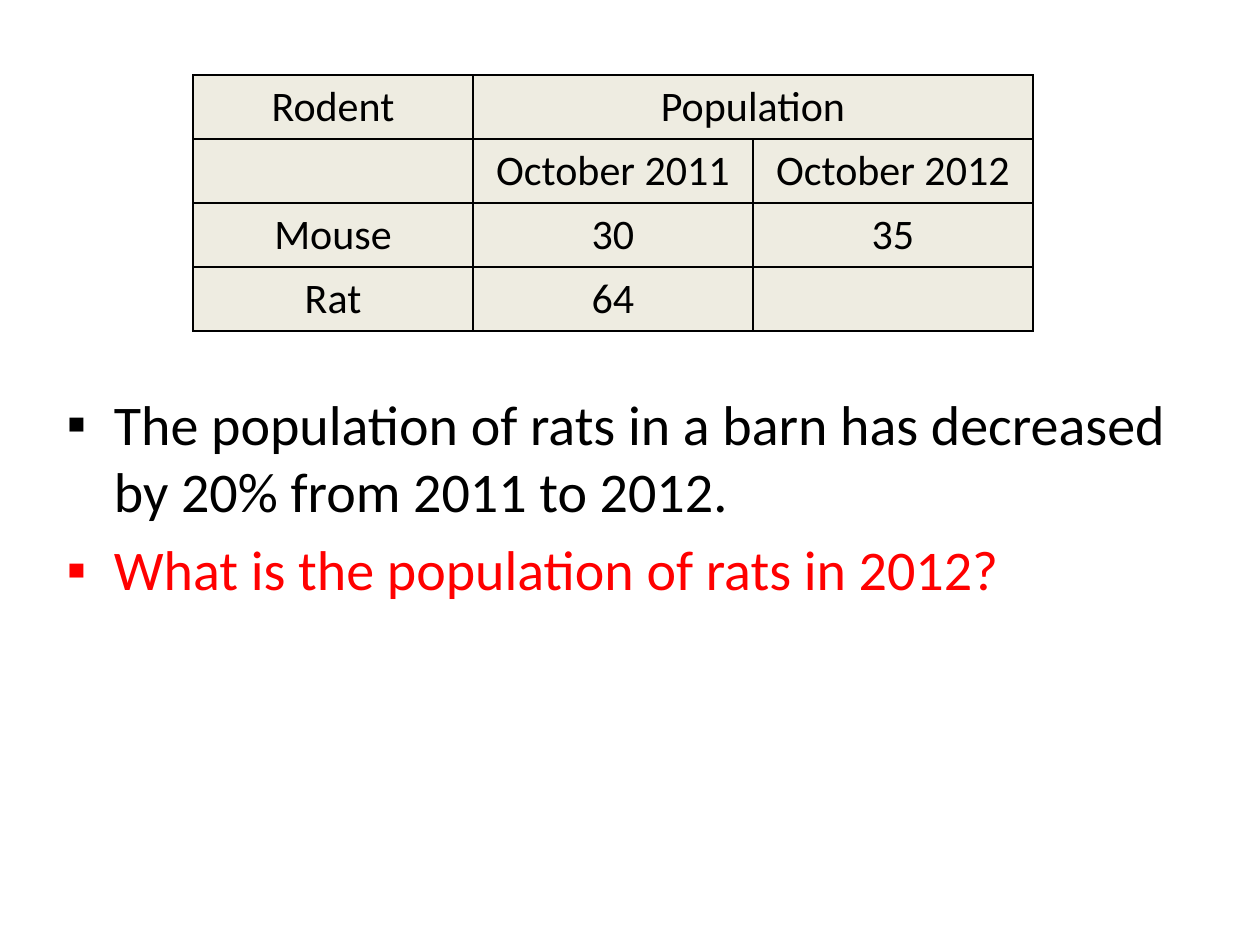
from dataclasses import dataclass

from lxml.etree import SubElement
from pptx import Presentation
from pptx.dml.color import RGBColor as Rgb
from pptx.enum.text import MSO_AUTO_SIZE as AutoSize, PP_ALIGN as Align
from pptx.oxml.ns import qn
from pptx.util import Pt

PX = 914400 / 126


def px(length):
    return round(length * PX)


@dataclass(frozen=True)
class Theme:
    font: str = "Calibri"
    bullet_font: str = "Arial"
    bullet: str = "▪"
    ink: str = "000000"
    question: str = "FF0000"
    cell: str = "EEECE1"
    table_size: int = 24
    body_size: int = 32
    border: int = 1


class SlideBuilder:
    """Draws themed elements on the current slide."""

    def __init__(self, deck, theme):
        self.theme = theme
        self.slide = deck.slides.add_slide(deck.slide_layouts[1])
        title = self.slide.shapes.title.element
        title.getparent().remove(title)

    def style(self, paragraph, size, color):
        for run in paragraph.runs:
            run.font.name = self.theme.font
            run.font.size = Pt(size)
            run.font.color.rgb = Rgb.from_string(color)

    def borders(self, cell):
        properties = cell._tc.get_or_add_tcPr()
        for side in ("a:lnL", "a:lnR", "a:lnT", "a:lnB"):
            line = SubElement(properties, qn(side), w=str(Pt(self.theme.border)))
            fill = SubElement(line, qn("a:solidFill"))
            SubElement(fill, qn("a:srgbClr"), val=self.theme.ink)

    def table(self, rows, left, top, column_width, row_height, merges):
        columns = len(rows[0])
        frame = self.slide.shapes.add_table(
            len(rows), columns, px(left), px(top),
            px(column_width * columns), px(row_height * len(rows)))
        grid = frame.table
        for r, row in enumerate(rows):
            for c, label in enumerate(row):
                cell = grid.cell(r, c)
                self.borders(cell)
                cell.fill.solid()
                cell.fill.fore_color.rgb = Rgb.from_string(self.theme.cell)
                cell.text_frame.text = label
                paragraph = cell.text_frame.paragraphs[0]
                paragraph.alignment = Align.CENTER
                self.style(paragraph, self.theme.table_size, self.theme.ink)
        for first, last in merges:
            grid.cell(*first).merge(grid.cell(*last))

    def bullets(self, items, left, top, width, height):
        body = self.slide.placeholders[1]
        body.left, body.top = px(left), px(top)
        body.width, body.height = px(width), px(height)
        frame = body.text_frame
        frame.text = "\n".join(text for text, _ in items)
        frame.auto_size = AutoSize.NONE
        for paragraph, (_, color) in zip(frame.paragraphs, items):
            self.style(paragraph, self.theme.body_size, color)
            properties = paragraph._p.get_or_add_pPr()
            SubElement(properties, qn("a:buFont"), typeface=self.theme.bullet_font)
            SubElement(properties, qn("a:buChar"), char=self.theme.bullet)


def main():
    deck = Presentation()
    deck.slide_width, deck.slide_height = px(1260), px(945)
    theme = Theme()
    builder = SlideBuilder(deck, theme)
    populations = [
        ("Rodent", "Population", ""),
        ("", "October 2011", "October 2012"),
        ("Mouse", "30", "35"),
        ("Rat", "64", ""),
    ]
    builder.table(populations, left=193, top=75, column_width=280,
                  row_height=64, merges=[((0, 1), (0, 2))])
    problem = [
        ("The population of rats in a barn has decreased by 20% from 2011 to 2012.",
         theme.ink),
        ("What is the population of rats in 2012?", theme.question),
    ]
    builder.bullets(problem, left=54, top=383, width=1153, height=252)
    deck.save("out.pptx")


if __name__ == "__main__":
    main()
